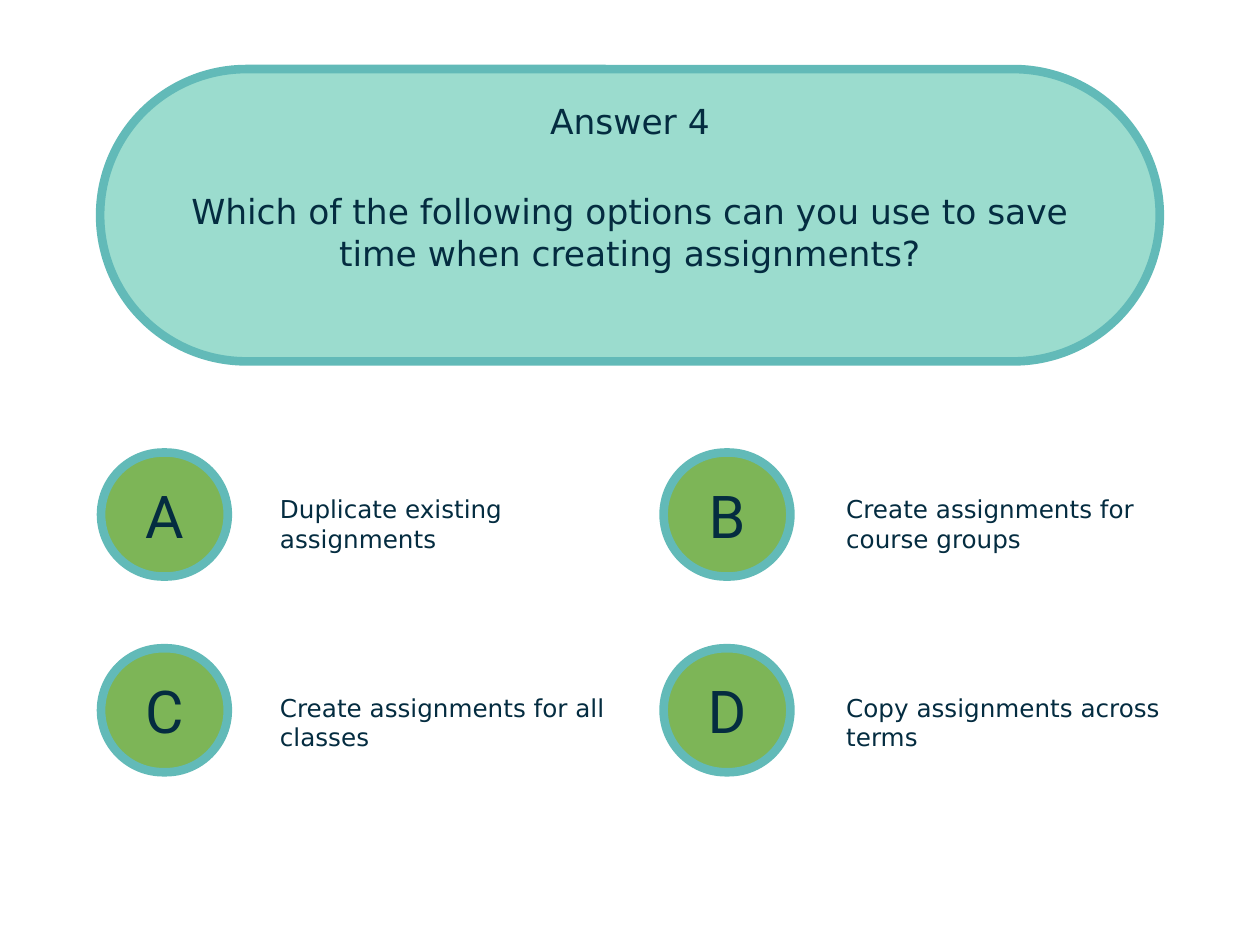
import dataclasses

import pptx
import pptx.dml.color
import pptx.enum.shapes
import pptx.enum.text
import pptx.shapes.autoshape
import pptx.util

RGBColor = pptx.dml.color.RGBColor
PP_ALIGN = pptx.enum.text.PP_ALIGN
MSO_ANCHOR = pptx.enum.text.MSO_ANCHOR

INK = RGBColor(0x04, 0x2C, 0x40)
TEAL = RGBColor(0x62, 0xBA, 0xB8)
MINT = RGBColor(0x9B, 0xDC, 0xCE)
GREEN = RGBColor(0x7D, 0xB5, 0x57)

WIDTH = pptx.util.Inches(14.22)
HEIGHT = pptx.util.Inches(10.67)
BODY_FONT = "DejaVu Sans"
BADGE_FONT = "Roboto"


@dataclasses.dataclass(frozen=True)
class Area:
    """A rectangle in percent of the slide's width and height."""
    left: float
    top: float
    width: float
    height: float

    def shifted(self, across: float, down: float) -> "Area":
        return dataclasses.replace(self, left=self.left + across, top=self.top + down)

    def lengths(self) -> tuple[int, int, int, int]:
        return (round(WIDTH * self.left / 100), round(HEIGHT * self.top / 100),
                round(WIDTH * self.width / 100), round(HEIGHT * self.height / 100))


@dataclasses.dataclass(frozen=True)
class Option:
    letter: str
    answer: str
    column: int
    row: int


BANNER = Area(7.95, 7.31, 84.1, 30.93)
HEADING = Area(7.52, 10.03, 84.95, 5.44)
QUESTION = Area(14.14, 19.59, 71.66, 9.93)
FIRST_BADGE = Area(8.02, 47.89, 10.06, 13.12)
BADGE_PITCH = (44.65, 20.71)
FIRST_ANSWER = Area(21.8, 51.73, 28.76, 7.31)
ANSWER_PITCH = (44.94, 21)

OPTIONS = [
    Option("A", "Duplicate existing assignments", 0, 0),
    Option("B", "Create assignments for course groups", 1, 0),
    Option("C", "Create assignments for all classes", 0, 1),
    Option("D", "Copy assignments across terms", 1, 1),
]


def write(shape: pptx.shapes.autoshape.Shape, words: str, size: int, font: str = BODY_FONT,
          align: PP_ALIGN = PP_ALIGN.CENTER, anchor: MSO_ANCHOR = MSO_ANCHOR.TOP,
          inset: float = 0.06) -> None:
    frame = shape.text_frame
    frame.text = words
    frame.word_wrap = True
    frame.auto_size = pptx.enum.text.MSO_AUTO_SIZE.NONE
    frame.vertical_anchor = anchor
    frame.margin_left = frame.margin_right = pptx.util.Inches(inset)
    frame.margin_top = frame.margin_bottom = pptx.util.Inches(inset)
    paragraph = frame.paragraphs[0]
    paragraph.alignment = align
    for run in paragraph.runs:
        run.font.size = pptx.util.Pt(size)
        run.font.name = font
        run.font.color.rgb = INK


def add_pill(slide: pptx.slide.Slide, area: Area, fill: RGBColor) -> pptx.shapes.autoshape.Shape:
    pill = slide.shapes.add_shape(
        pptx.enum.shapes.MSO_SHAPE.ROUNDED_RECTANGLE, *area.lengths())
    pill.adjustments[0] = 0.5
    pill.shadow.inherit = False
    pill.fill.solid()
    pill.fill.fore_color.rgb = fill
    pill.line.color.rgb = TEAL
    pill.line.width = pptx.util.Pt(7)
    return pill


def add_heading(slide: pptx.slide.Slide, words: str) -> None:
    """Fill the title placeholder and bring it in front of the banner."""
    heading = slide.shapes.title
    heading.left, heading.top, heading.width, heading.height = HEADING.lengths()
    write(heading, words, 28)
    heading.element.getparent().append(heading.element)


def add_option(slide: pptx.slide.Slide, option: Option) -> None:
    badge_area, answer_area = (
        first.shifted(option.column * across, option.row * down)
        for first, (across, down) in ((FIRST_BADGE, BADGE_PITCH), (FIRST_ANSWER, ANSWER_PITCH)))
    badge = add_pill(slide, badge_area, GREEN)
    write(badge, option.letter, 48, BADGE_FONT, anchor=MSO_ANCHOR.MIDDLE, inset=0.04)
    answer = slide.shapes.add_textbox(*answer_area.lengths())
    write(answer, option.answer, 20, align=PP_ALIGN.LEFT)


def main() -> None:
    presentation = pptx.Presentation()
    presentation.slide_width = WIDTH
    presentation.slide_height = HEIGHT
    slide = presentation.slides.add_slide(presentation.slide_layouts[5])

    add_pill(slide, BANNER, MINT)
    add_heading(slide, "Answer 4")
    question = slide.shapes.add_textbox(*QUESTION.lengths())
    write(question, "Which of the following options can you use to save time "
                    "when creating assignments?", 28)
    for option in OPTIONS:
        add_option(slide, option)

    presentation.save("out.pptx")


if __name__ == "__main__":
    main()
